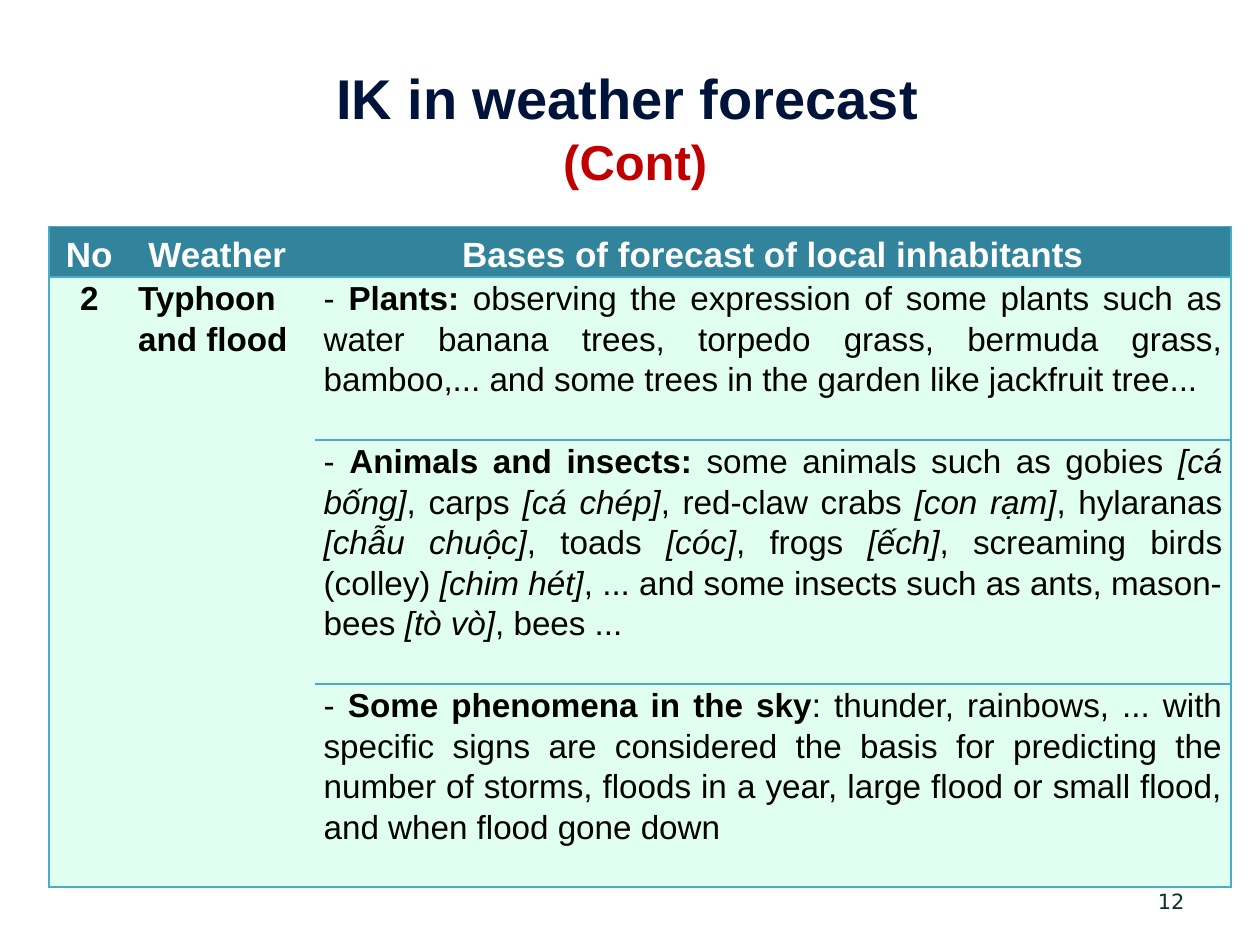
from lxml import etree
from pptx import Presentation
from pptx.dml.color import RGBColor
from pptx.enum import text
from pptx.oxml import ns
from pptx.util import Pt

NAVY = RGBColor(0x00, 0x13, 0x3A)
RED = RGBColor(0xC0, 0x00, 0x00)
DARK_GREEN = RGBColor(0x0C, 0x32, 0x26)
TEAL = RGBColor(0x31, 0x84, 0x9B)
BORDER = RGBColor(0x4B, 0xAC, 0xC6)
MINT = RGBColor(0xB9, 0xFF, 0xDC)
WHITE = RGBColor(0xFF, 0xFF, 0xFF)
BLACK = RGBColor(0x00, 0x00, 0x00)

LEFT, CENTER, RIGHT, JUSTIFY = (
    text.PP_ALIGN.LEFT, text.PP_ALIGN.CENTER, text.PP_ALIGN.RIGHT, text.PP_ALIGN.JUSTIFY)

TITLE = [("IK in weather forecast ", 32, NAVY), ("(Cont)", 28, RED)]
PAGE_NUMBER = "12"

# A cell is a list of (wording, style) runs; "b" is bold, "i" is italic.
HEADER = [[("No", "b")], [("Weather ", "b")],
          [("Bases of forecast of local inhabitants", "b")]]
PLANTS = [
    ("- ", ""), ("Plants:", "b"),
    (" observing the expression of some plants such as water banana trees, torpedo grass, "
     "bermuda grass, bamboo,... and some trees in the garden like jackfruit tree...", "")]
ANIMALS = [
    ("- ", ""), ("Animals and insects: ", "b"),
    ("some animals such as gobies ", ""), ("[cá bống]", "i"),
    (", carps ", ""), ("[cá chép]", "i"),
    (", red-claw crabs ", ""), ("[con rạm]", "i"),
    (", hylaranas ", ""), ("[chẫu chuộc]", "i"),
    (", toads ", ""), ("[cóc]", "i"),
    (", frogs ", ""), ("[ếch]", "i"),
    (", screaming birds (colley) ", ""), ("[chim hét]", "i"),
    (", ... and some insects such as ants, mason-bees ", ""), ("[tò vò]", "i"),
    (", bees ...", "")]
SKY = [
    ("- ", ""), ("Some phenomena in the sky", "b"),
    (": thunder, rainbows, ... with specific signs are considered the basis for predicting "
     "the number of storms, floods in a year, large flood or small flood, "
     "and when flood gone down ", "")]
ROWS = [
    HEADER,
    [[("2", "b")], [("Typhoon and flood", "b")], PLANTS],
    [[], [], ANIMALS],
    [[], [], SKY],
]
COLUMN_WIDTHS = [46, 106, 523.5]
ROW_HEIGHTS = [28, 93, 139.5, 116]
BODY_ALIGNMENTS = [CENTER, LEFT, JUSTIFY]


def add_lines(slide, box, lines, alignment, font_name, bold):
    frame = slide.shapes.add_textbox(*map(Pt, box)).text_frame
    frame.word_wrap = True
    frame.vertical_anchor = text.MSO_ANCHOR.MIDDLE
    frame.text = "\n".join(wording for wording, _, _ in lines)
    for paragraph, (_, size, color) in zip(frame.paragraphs, lines):
        paragraph.alignment = alignment
        format_font(paragraph.runs[0].font, font_name, size, color, bold)


def format_font(font, name, size, color, bold):
    font.name, font.size, font.bold = name, Pt(size), bold
    font.color.rgb = color


def set_borders(cell, visible_sides):
    properties = cell._tc.get_or_add_tcPr()
    for side in "LRTB":
        line = etree.SubElement(properties, ns.qn(f"a:ln{side}"), w=str(Pt(1)))
        if side in visible_sides:
            fill = etree.SubElement(line, ns.qn("a:solidFill"))
            etree.SubElement(fill, ns.qn("a:srgbClr"), val=str(BORDER))
        else:
            etree.SubElement(line, ns.qn("a:noFill"))


def border_sides(row, column):
    """Outer frame, a line under the header, and row lines in the last column only."""
    last_column = column == len(COLUMN_WIDTHS) - 1
    sides = {
        "L": column == 0,
        "R": last_column,
        "T": row <= 1 or last_column,
        "B": row in (0, len(ROWS) - 1) or last_column,
    }
    return [side for side, visible in sides.items() if visible]


def fill_cell(cell, color, opacity=None):
    cell.fill.solid()
    cell.fill.fore_color.rgb = color
    if opacity is not None:
        color_element = cell._tc.tcPr.find(f"{ns.qn('a:solidFill')}/{ns.qn('a:srgbClr')}")
        etree.SubElement(color_element, ns.qn("a:alpha"), val=str(opacity * 1000))


def write_cell(cell, runs, alignment, size, color, line_spacing):
    cell.margin_left = cell.margin_right = Pt(5)
    cell.margin_top = cell.margin_bottom = 0
    paragraph = cell.text_frame.paragraphs[0]
    paragraph.alignment = alignment
    paragraph.line_spacing = line_spacing
    for wording, style in runs:
        run = paragraph.add_run()
        run.text = wording
        format_font(run.font, "Arial", size, color, style == "b")
        run.font.italic = style == "i"


def add_forecast_table(slide):
    table = slide.shapes.add_table(
        len(ROWS), len(COLUMN_WIDTHS), Pt(28), Pt(129.5),
        Pt(sum(COLUMN_WIDTHS)), Pt(sum(ROW_HEIGHTS))).table
    table.horz_banding = False
    for column, width in zip(table.columns, COLUMN_WIDTHS):
        column.width = Pt(width)
    for row, height in zip(table.rows, ROW_HEIGHTS):
        row.height = Pt(height)
    for r, cells in enumerate(ROWS):
        for c, runs in enumerate(cells):
            cell = table.cell(r, c)
            set_borders(cell, border_sides(r, c))
            if r == 0:
                fill_cell(cell, TEAL)
                cell.vertical_anchor = text.MSO_ANCHOR.MIDDLE
                write_cell(cell, runs, CENTER, 20, WHITE, 1.2)
            else:
                fill_cell(cell, MINT, opacity=42)
                write_cell(cell, runs, BODY_ALIGNMENTS[c], 19, BLACK, 1.1)


def main():
    deck = Presentation()
    deck.slide_width, deck.slide_height = Pt(720), Pt(540)
    slide = deck.slides.add_slide(deck.slide_layouts[6])
    add_lines(slide, (516, 500.5, 168, 29), [(PAGE_NUMBER, 12, DARK_GREEN)],
              RIGHT, "DejaVu Sans", False)
    add_lines(slide, (96, 21.5, 534, 102), TITLE, CENTER, "Arial", True)
    add_forecast_table(slide)
    deck.save("out.pptx")


if __name__ == "__main__":
    main()
